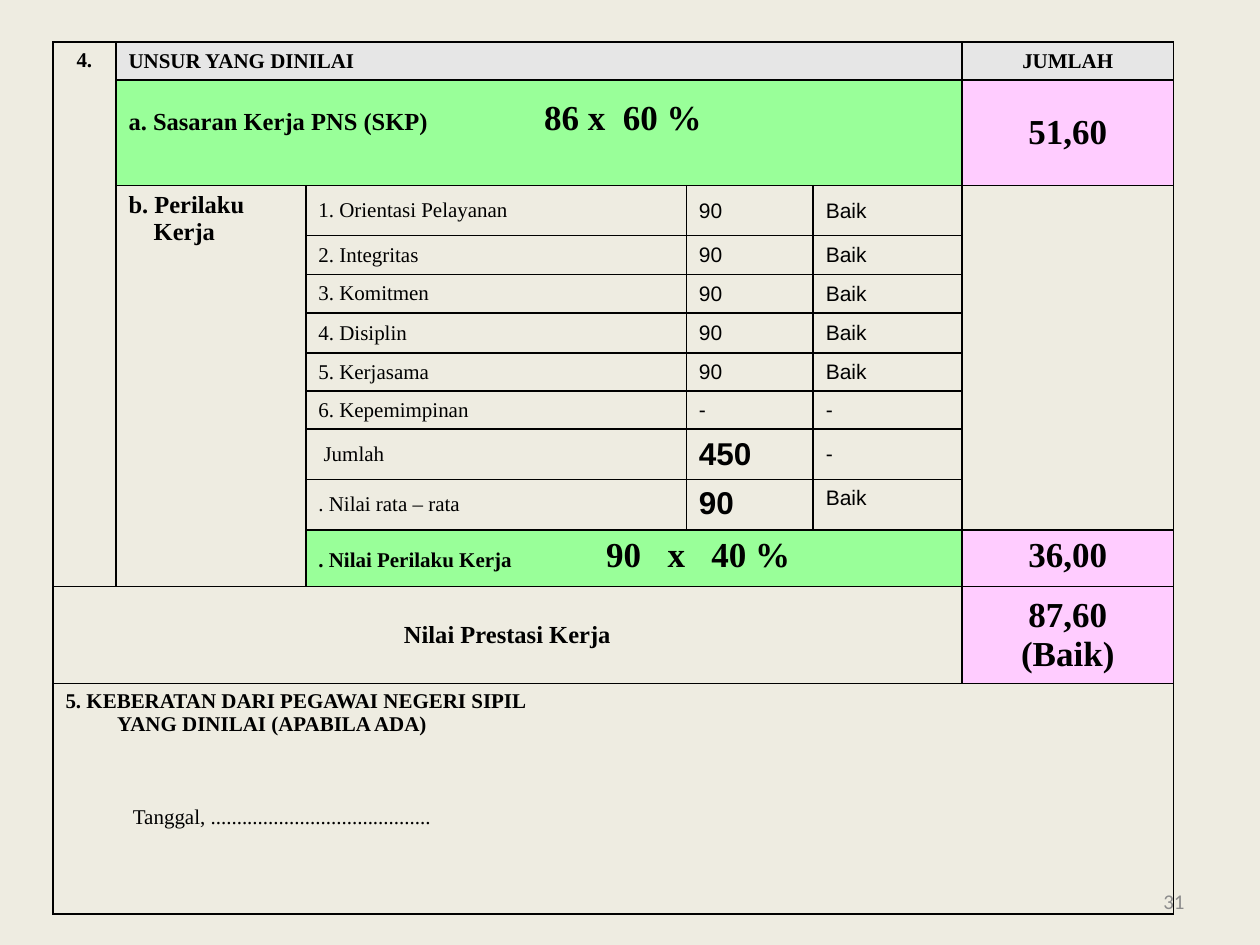
from lxml import etree
from pptx import Presentation
from pptx.dml.color import RGBColor
from pptx.enum.text import MSO_ANCHOR, PP_ALIGN
from pptx.oxml.ns import qn
from pptx.util import Pt

LEFT, CENTER, RIGHT = PP_ALIGN.LEFT, PP_ALIGN.CENTER, PP_ALIGN.RIGHT
TOP, MIDDLE = MSO_ANCHOR.TOP, MSO_ANCHOR.MIDDLE
SERIF, SANS = "Times New Roman", "Arial"

COLORS = {
    "page": "EEECE1", "header": "E6E6E6", "score": "99FF99", "total": "FFCCFF",
    "ink": "000000", "number": "8C8C8C",
}

COL_WIDTHS = [36, 108.5, 217.5, 72.5, 85, 121]
ROW_HEIGHTS = [20.5, 60.5, 28.5, 22.3, 22, 22.8, 21.8, 21.8, 27.4, 27.4, 32.3, 52.3, 131.8]

RATINGS = [
    ("1. Orientasi Pelayanan", "90", "Baik"),
    ("2. Integritas", "90", "Baik"),
    ("3. Komitmen", "90", "Baik"),
    ("4. Disiplin", "90", "Baik"),
    ("5. Kerjasama", "90", "Baik"),
    ("6. Kepemimpinan", "-", "-"),
    (" Jumlah", "450", "-"),
    (". Nilai rata – rata", "90", "Baik"),
]
FIRST_RATING = 2
SUM_ROW = FIRST_RATING + 6
AVERAGE_ROW = FIRST_RATING + 7

MERGES = [
    (0, 0, 10, 0), (0, 1, 0, 4), (1, 1, 1, 4), (2, 1, 10, 1), (2, 5, 9, 5),
    (10, 2, 10, 4), (11, 0, 11, 4), (12, 0, 12, 5),
]

CELLS = [
    (0, 0, ["4."], dict(align=CENTER, anchor=TOP)),
    (0, 1, ["UNSUR YANG DINILAI"], dict(fill="header")),
    (0, 5, ["JUMLAH"], dict(align=CENTER, fill="header")),
    (1, 1, [[("a. Sasaran Kerja PNS (SKP)\t", 14), ("86 x  60 %", 20)]],
     dict(fill="score", tab=237.5, bottom=19.7)),
    (1, 5, ["51,60"], dict(size=20, align=CENTER, fill="total")),
    (2, 1, ["b. Perilaku Kerja"], dict(size=14, anchor=TOP, hanging=14.4)),
    (10, 2, [[(". Nilai Perilaku Kerja\t", 12), ("90   x   40 %", 20)]],
     dict(anchor=TOP, fill="score", tab=164.5)),
    (10, 5, ["36,00"], dict(size=20, align=CENTER, anchor=TOP, fill="total")),
    (11, 0, ["Nilai Prestasi Kerja"], dict(size=14, align=CENTER)),
    (11, 5, ["87,60", "(Baik)"], dict(size=20, align=CENTER, fill="total")),
    (12, 0, ["5. KEBERATAN DARI PEGAWAI NEGERI SIPIL", "YANG DINILAI (APABILA ADA)",
             "Tanggal, .........................................."], dict(anchor=TOP)),
]


def rgb(name):
    return RGBColor.from_string(COLORS[name])


def style(font, name, color, bold=False):
    font.name, font.bold = name, bold
    font.color.rgb = rgb(color)


def indent(p, left, first=0):
    pPr = p._p.get_or_add_pPr()
    pPr.set("marL", str(Pt(left)))
    pPr.set("indent", str(Pt(first)))


def add_tab(p, position):
    tabs = etree.SubElement(p._p.get_or_add_pPr(), qn("a:tabLst"))
    etree.SubElement(tabs, qn("a:tab"), pos=str(Pt(position)), algn="l")


def add_borders(cell):
    tcPr = cell._tc.get_or_add_tcPr()
    for side in ("lnL", "lnR", "lnT", "lnB"):
        ln = etree.SubElement(tcPr, qn("a:" + side), w=str(Pt(1)))
        fill = etree.SubElement(ln, qn("a:solidFill"))
        etree.SubElement(fill, qn("a:srgbClr"), val=COLORS["ink"])


def fill_cell(cell, lines, size=12, font=SERIF, bold=True, align=LEFT, anchor=MIDDLE,
              fill=None, tab=None, hanging=None, bottom=3.6):
    cell.vertical_anchor = anchor
    cell.margin_bottom = Pt(bottom)
    if fill:
        cell.fill.solid()
        cell.fill.fore_color.rgb = rgb(fill)
    tf = cell.text_frame
    for i, line in enumerate(lines):
        p = tf.add_paragraph() if i else tf.paragraphs[0]
        p.alignment = align
        if tab:
            add_tab(p, tab)
        if hanging:
            indent(p, hanging, -hanging)
        style(p.font, font, "ink", bold)
        if isinstance(line, str):
            p.font.size = Pt(size)
            p.add_run().text = line
        else:
            for text, run_size in line:
                r = p.add_run()
                r.text = text
                r.font.size = Pt(run_size)


prs = Presentation()
prs.slide_width, prs.slide_height = Pt(720), Pt(540)
s = prs.slides.add_slide(prs.slide_layouts[6])
s.background.fill.solid()
s.background.fill.fore_color.rgb = rgb("page")

sp = s.shapes.add_textbox(Pt(516), Pt(500.5), Pt(168), Pt(28.75))
tf = sp.text_frame
tf.word_wrap = True
tf.vertical_anchor = MIDDLE
p = tf.paragraphs[0]
p.text = "31"
p.alignment = RIGHT
p.font.size = Pt(12)
style(p.font, "Calibri", "number")

table = s.shapes.add_table(len(ROW_HEIGHTS), len(COL_WIDTHS), Pt(30.25), Pt(24),
                           Pt(sum(COL_WIDTHS)), Pt(sum(ROW_HEIGHTS))).table
table.first_row = table.horz_banding = False
for column, width in zip(table.columns, COL_WIDTHS):
    column.width = Pt(width)
for row, height in zip(table.rows, ROW_HEIGHTS):
    row.height = Pt(height)
for cell in table.iter_cells():
    add_borders(cell)
    cell.fill.background()
    cell.text_frame.paragraphs[0].font.size = Pt(12)
for top, left, bottom, right in MERGES:
    table.cell(top, left).merge(table.cell(bottom, right))

for row, (label, score, grade) in enumerate(RATINGS, FIRST_RATING):
    big = row in (SUM_ROW, AVERAGE_ROW)
    anchor = TOP if row == AVERAGE_ROW else MIDDLE
    fill_cell(table.cell(row, 2), [label], bold=False)
    fill_cell(table.cell(row, 3), [score], size=18 if big else 12, font=SANS, bold=big, anchor=anchor)
    fill_cell(table.cell(row, 4), [grade], font=SANS, bold=False, anchor=anchor)

for row, col, lines, options in CELLS:
    fill_cell(table.cell(row, col), lines, **options)

title, subtitle, date = table.cell(12, 0).text_frame.paragraphs
indent(subtitle, 29.5)
indent(date, 38.5)
date.space_before = Pt(40)
date.font.bold = False

prs.save("out.pptx")
